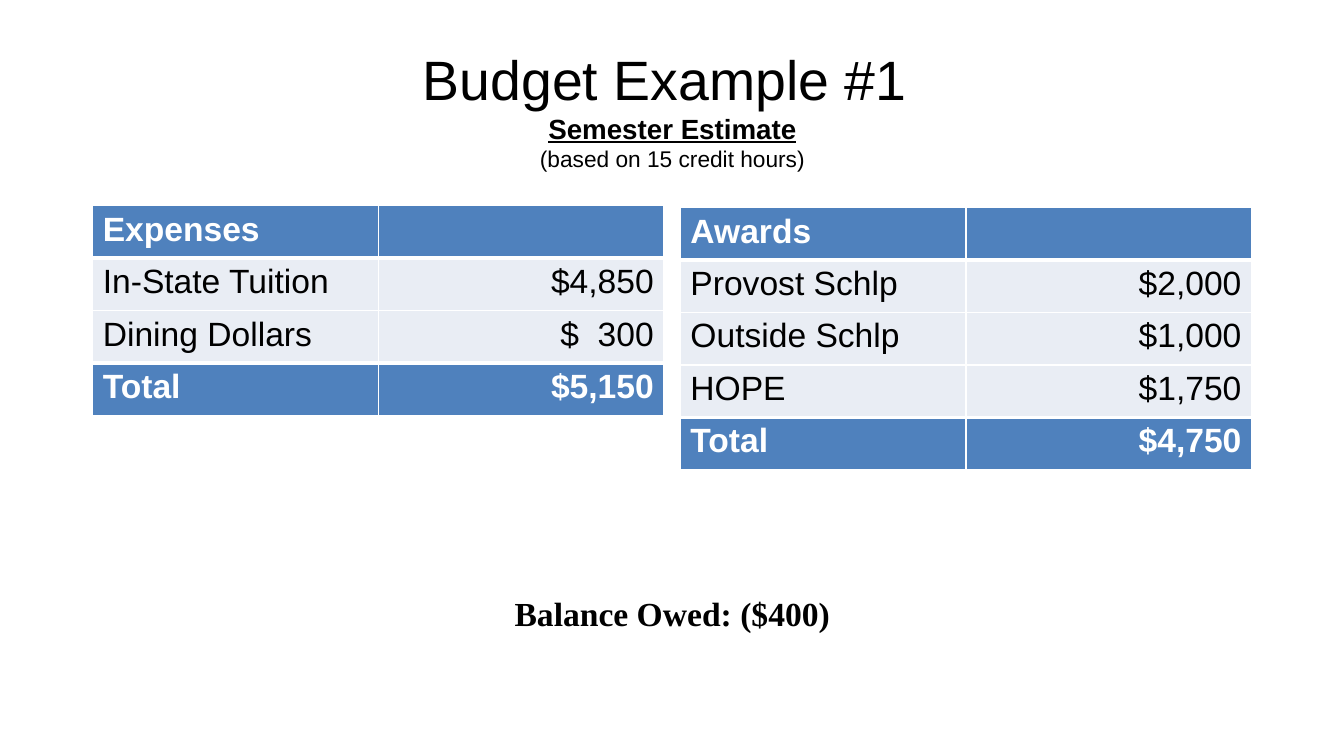
from lxml.etree import SubElement
from pptx import Presentation
from pptx.dml.color import RGBColor
from pptx.enum.text import MSO_ANCHOR, MSO_AUTO_SIZE, PP_ALIGN
from pptx.oxml.ns import qn
from pptx.util import Pt

TITLE = [
    ("Budget Example #1 ", 39.6, False),
    ("Semester Estimate", 19.8, True),
    ("(based on 15 credit hours)", 16.2, False),
]
EXPENSES = [
    ("Expenses", ""),
    ("In-State Tuition", "$4,850"),
    ("Dining Dollars", "$  300"),
    ("Total", "$5,150"),
]
AWARDS = [
    ("Awards", ""),
    ("Provost Schlp", "$2,000"),
    ("Outside Schlp", "$1,000"),
    ("HOPE", "$1,750"),
    ("Total", "$4,750"),
]
BALANCE = "Balance Owed: ($400)"

BLACK, WHITE, BLUE, PALE = "000000", "FFFFFF", "4F81BD", "E9EDF4"
LEFT, WIDTH = 66.24, 828
COLUMN_WIDTH, ROW_HEIGHT = 204, 37.5
TABLES = [(EXPENSES, LEFT, 146.9), (AWARDS, 486, 148.3)]


def color(value):
    return RGBColor.from_string(value)


def add_span(para, text, size, shade=BLACK, bold=False, name="Arial"):
    span = para.add_run()
    span.text = text
    span.font.name = name
    span.font.size = Pt(size)
    span.font.bold = bold
    span.font.color.rgb = color(shade)
    return span


def add_borders(cell, top, bottom):
    properties = cell._tc.get_or_add_tcPr()
    for tag, width in (("a:lnL", 1), ("a:lnR", 1), ("a:lnT", top), ("a:lnB", bottom)):
        line = SubElement(properties, qn(tag), w=str(Pt(width)))
        fill = SubElement(line, qn("a:solidFill"))
        SubElement(fill, qn("a:srgbClr"), val=WHITE)


def add_budget_table(page, rows, left, top):
    last = len(rows) - 1
    table = page.shapes.add_table(
        len(rows), 2, Pt(left), Pt(top), Pt(2 * COLUMN_WIDTH), Pt(len(rows) * ROW_HEIGHT)
    ).table
    table.horz_banding = False
    table.last_row = True
    for column in table.columns:
        column.width = Pt(COLUMN_WIDTH)
    for row_index, row in enumerate(rows):
        table.rows[row_index].height = Pt(ROW_HEIGHT)
        strong = row_index in (0, last)
        top_width = 3 if row_index in (1, last) else 1
        bottom_width = 3 if row_index in (0, last - 1) else 1
        for column_index, text in enumerate(row):
            cell = table.cell(row_index, column_index)
            add_borders(cell, top_width, bottom_width)
            cell.fill.solid()
            cell.fill.fore_color.rgb = color(BLUE if strong else PALE)
            para = cell.text_frame.paragraphs[0]
            para.alignment = PP_ALIGN.RIGHT if column_index else PP_ALIGN.LEFT
            if text:
                add_span(para, text, 24, WHITE if strong else BLACK, strong)


def add_title(page):
    title = page.shapes.title
    title.left, title.top = Pt(LEFT), Pt(28.8)
    title.width, title.height = Pt(WIDTH), Pt(97.2)
    frame = title.text_frame
    frame.auto_size = MSO_AUTO_SIZE.NONE
    frame.vertical_anchor = MSO_ANCHOR.MIDDLE
    para = frame.paragraphs[0]
    para.alignment = PP_ALIGN.CENTER
    for index, (text, size, strong) in enumerate(TITLE):
        if index:
            para.add_line_break()
        add_span(para, text, size, bold=strong).font.underline = strong


def add_balance(page):
    box = page.shapes.add_textbox(Pt(LEFT), Pt(419.8), Pt(WIDTH), Pt(36))
    frame = box.text_frame
    frame.word_wrap = True
    frame.auto_size = MSO_AUTO_SIZE.SHAPE_TO_FIT_TEXT
    para = frame.paragraphs[0]
    para.alignment = PP_ALIGN.CENTER
    add_span(para, BALANCE, 24, bold=True, name="Times New Roman")


def main():
    deck = Presentation()
    deck.slide_width, deck.slide_height = Pt(960), Pt(540)
    page = deck.slides.add_slide(deck.slide_layouts[5])
    add_title(page)
    for rows, left, top in TABLES:
        add_budget_table(page, rows, left, top)
    add_balance(page)
    deck.save("out.pptx")


if __name__ == "__main__":
    main()
